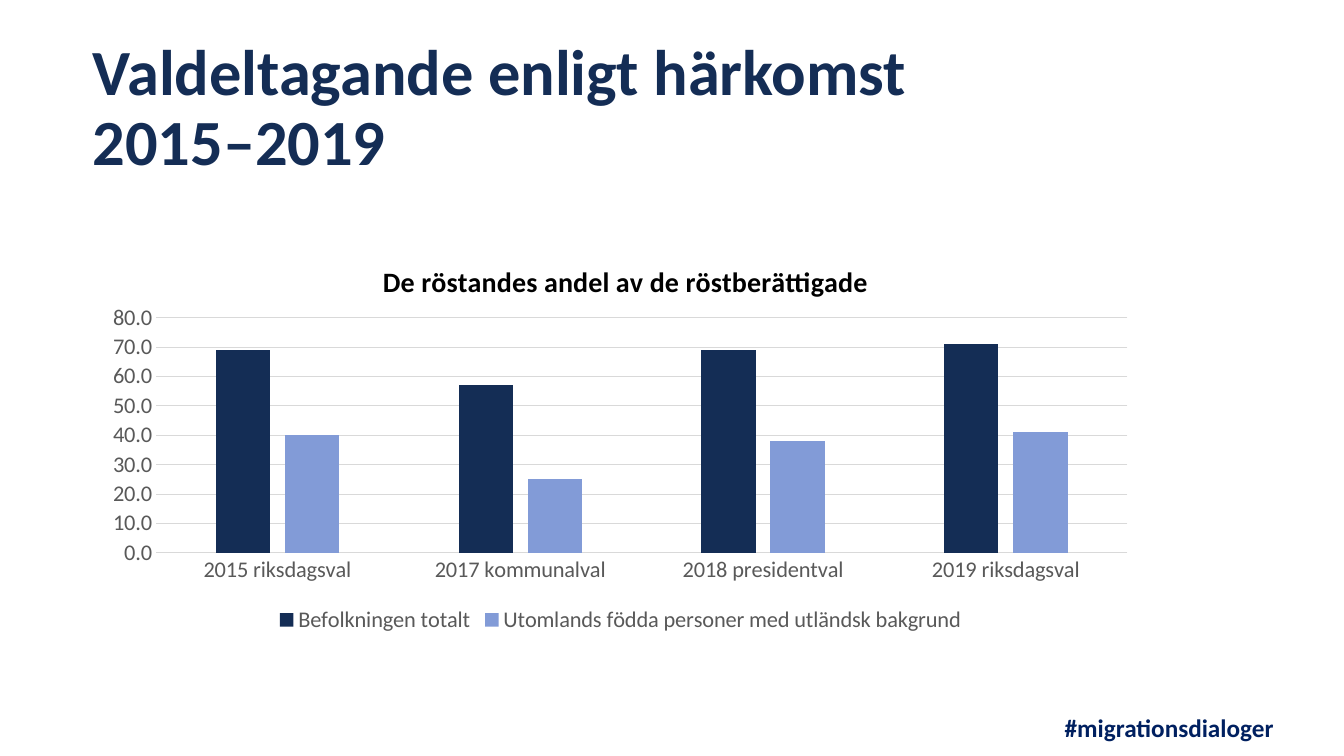
from dataclasses import dataclass

from lxml import etree
from pptx import Presentation
from pptx.chart.data import CategoryChartData
from pptx.dml.color import RGBColor
from pptx.enum.chart import XL_CHART_TYPE, XL_LEGEND_POSITION, XL_TICK_MARK
from pptx.enum.text import MSO_ANCHOR
from pptx.oxml.ns import qn
from pptx.util import Inches, Pt

CLUSTERED = XL_CHART_TYPE.COLUMN_CLUSTERED
LEGEND_BOTTOM = XL_LEGEND_POSITION.BOTTOM
NO_TICK = XL_TICK_MARK.NONE
TOP, BOTTOM = MSO_ANCHOR.TOP, MSO_ANCHOR.BOTTOM

SLIDE_W, SLIDE_H = 13.33, 7.5
LEFT, CONTENT_W = 0.92, 10.47
TITLE_BOX = (LEFT, 0.42, CONTENT_W, 1.36)
CHART_BOX = (LEFT, 2.31, CONTENT_W, 4.02)
HASHTAG_BOX = (10.56, 7.04, 2.63, 0.23)

CATEGORIES = ["2015 riksdagsval", "2017 kommunalval", "2018 presidentval", "2019 riksdagsval"]
TURNOUT = {
    "Befolkningen totalt": (69, 57, 69, 71),
    "Utomlands födda personer med utländsk bakgrund": (40, 25, 38, 41),
}


@dataclass(frozen=True)
class Theme:
    font: str = "Calibri"
    navy: str = "142D55"
    hashtag: str = "002060"
    black: str = "000000"
    label: str = "595959"
    grid: str = "D9D9D9"
    bars: tuple = ("142D55", "829BD7")
    title_size: int = 46
    chart_title_size: int = 20
    hashtag_size: int = 18
    label_size: int = 16


THEME = Theme()


def style_font(font, size, color, bold=False):
    font.name = THEME.font
    font.size = Pt(size)
    font.bold = bold
    font.color.rgb = RGBColor.from_string(color)


def add_text(slide, box, text, size, color, bold=True, spacing=1.0, anchor=TOP):
    tf = slide.shapes.add_textbox(*map(Inches, box)).text_frame
    tf.word_wrap = True
    tf.vertical_anchor = anchor
    tf.margin_left = tf.margin_top = tf.margin_right = tf.margin_bottom = 0
    p = tf.paragraphs[0]
    p.text = text
    p.line_spacing = spacing
    for r in p.runs:
        style_font(r.font, size, color, bold)


def set_layout(element, before, **shares):
    """Place a chart part by shares of the chart's size, ahead of the tags in before."""
    for old in element.findall(qn("c:layout")):
        element.remove(old)
    layout = etree.Element(qn("c:layout"))
    manual = etree.SubElement(layout, qn("c:manualLayout"))
    if "w" in shares:
        etree.SubElement(manual, qn("c:layoutTarget")).set("val", "inner")
    for axis in "xy":
        etree.SubElement(manual, qn(f"c:{axis}Mode")).set("val", "edge")
    for name, share in shares.items():
        etree.SubElement(manual, qn(f"c:{name}")).set("val", str(share))
    next(child for child in element if child.tag in map(qn, before)).addprevious(layout)


def style_axis(axis):
    axis.major_tick_mark = axis.minor_tick_mark = NO_TICK
    style_font(axis.tick_labels.font, THEME.label_size, THEME.label)


def style_line(line):
    line.color.rgb = RGBColor.from_string(THEME.grid)
    line.width = Pt(0.75)


def add_turnout_chart(slide, box):
    data = CategoryChartData(number_format="0.0")
    data.categories = CATEGORIES
    for name, values in TURNOUT.items():
        data.add_series(name, values)
    chart = slide.shapes.add_chart(CLUSTERED, *map(Inches, box), data).chart
    style_font(chart.font, THEME.label_size, THEME.label)

    chart.has_title = True
    p = chart.chart_title.text_frame.paragraphs[0]
    r = p.add_run()
    r.text = "De röstandes andel av de röstberättigade"
    style_font(r.font, THEME.chart_title_size, THEME.black, bold=True)
    set_layout(chart.chart_title._element, ["c:overlay"], x=0.27, y=0.06)

    chart.has_legend = True
    chart.legend.position = LEGEND_BOTTOM
    chart.legend.include_in_layout = False
    style_font(chart.legend.font, THEME.label_size, THEME.label)

    style_axis(chart.category_axis)
    style_line(chart.category_axis.format.line)
    values = chart.value_axis
    style_axis(values)
    values.minimum_scale, values.maximum_scale, values.major_unit = 0, 80, 10
    values.format.line.fill.background()
    values.tick_labels.number_format = "0.0"
    values.tick_labels.number_format_is_linked = False
    style_line(values.major_gridlines.format.line)

    plot = chart.plots[0]
    plot.gap_width, plot.overlap = 219, -27
    plot.vary_by_categories = False
    for series, color in zip(plot.series, THEME.bars):
        series.format.fill.solid()
        series.format.fill.fore_color.rgb = RGBColor.from_string(color)
    plot_area = plot._element.getparent()
    set_layout(plot_area, ["c:barChart"], x=0.06, y=0.21, w=0.92, h=0.58)


def build_slide(prs):
    slide = prs.slides.add_slide(prs.slide_layouts[6])
    add_text(slide, HASHTAG_BOX, "#migrationsdialoger", THEME.hashtag_size, THEME.hashtag,
             spacing=1.1)
    add_text(slide, TITLE_BOX, "Valdeltagande enligt härkomst\v2015–2019", THEME.title_size,
             THEME.navy, spacing=0.9, anchor=BOTTOM)
    add_turnout_chart(slide, CHART_BOX)


def main():
    prs = Presentation()
    prs.slide_width, prs.slide_height = Inches(SLIDE_W), Inches(SLIDE_H)
    build_slide(prs)
    prs.save("out.pptx")


if __name__ == "__main__":
    main()
